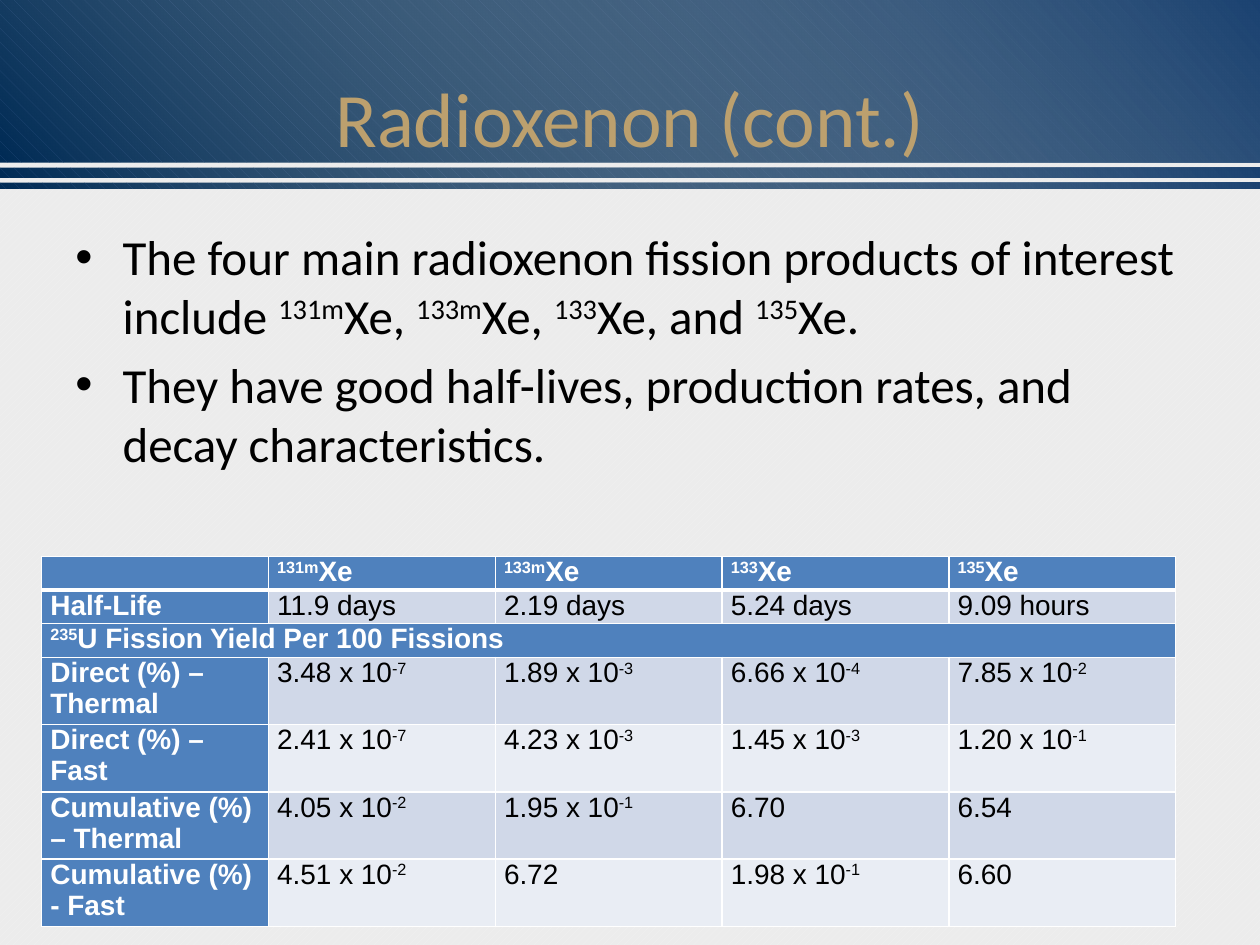
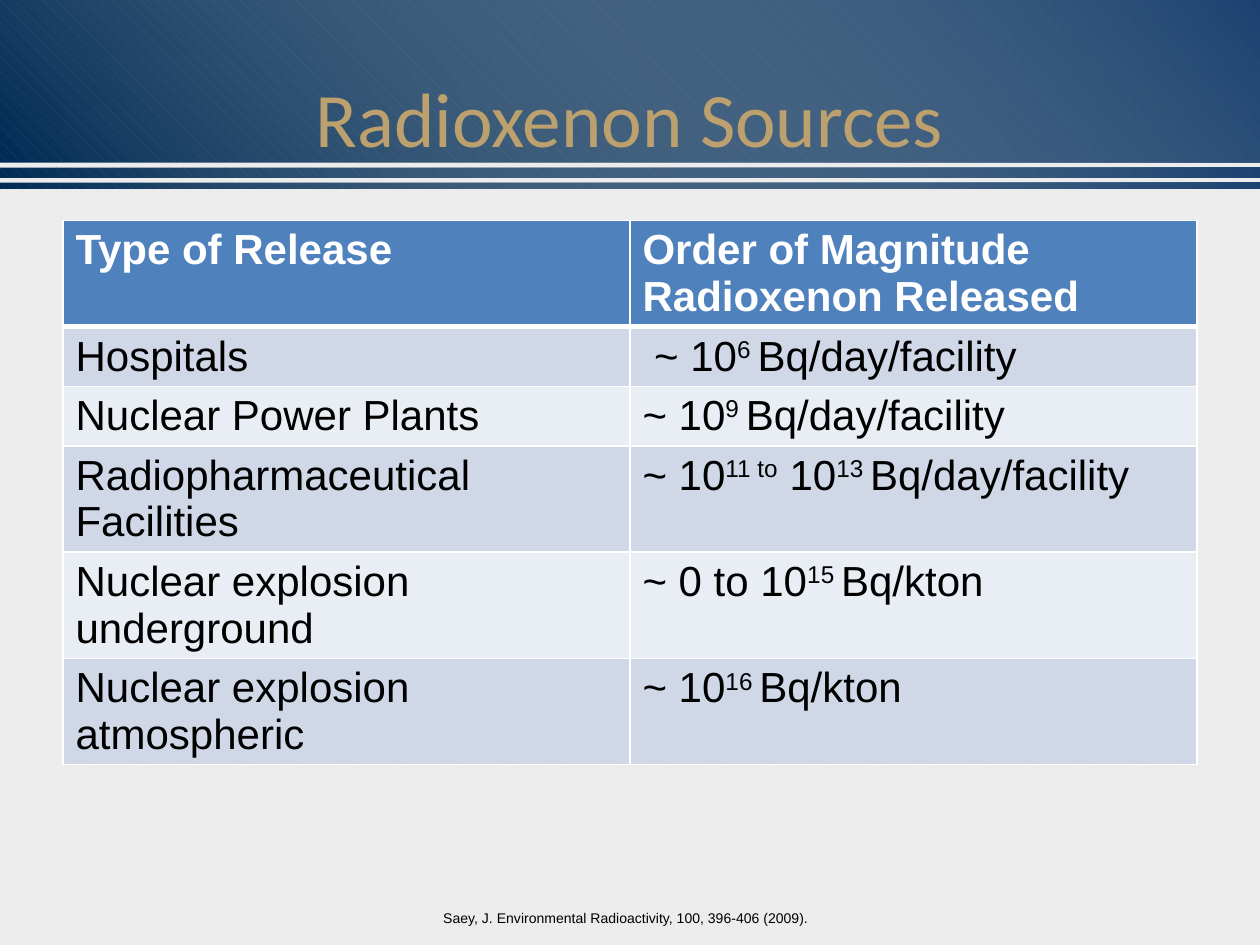
from lxml import etree
from pptx import Presentation
from pptx import util as u
from pptx.dml import color
from pptx.enum import dml, shapes, text
from pptx.oxml import ns

Pt = u.Pt
COLORS = {
    "navy": "002B55", "blue": "1C4372", "cream": "EEECE1", "gold": "BCA06E",
    "paper": "ECECEC", "hatch": "F2F2F2", "head": "4F81BD", "odd": "D0D8E8",
    "even": "E9EDF4", "white": "FFFFFF", "black": "000000",
}
BANDS = [(0, 92.9), (95.8, 5.8), (104.4, 3.6)]
WIDTH, HEIGHT = 720, 540

ISOTOPES = [
    ["", "^131m^Xe", "^133m^Xe", "^133^Xe", "^135^Xe"],
    ["Half-Life", "11.9 days", "2.19 days", "5.24 days", "9.09 hours"],
    ["^235^U Fission Yield Per 100 Fissions", "", "", "", ""],
    ["Direct (%) – Thermal", "3.48 x 10^-7", "1.89 x 10^-3", "6.66 x 10^-4", "7.85 x 10^-2"],
    ["Direct (%) – Fast", "2.41 x 10^-7", "4.23 x 10^-3", "1.45 x 10^-3", "1.20 x 10^-1"],
    ["Cumulative (%) – Thermal", "4.05 x 10^-2", "1.95 x 10^-1", "6.70", "6.54"],
    ["Cumulative (%) - Fast", "4.51 x 10^-2", "6.72", "1.98 x 10^-1", "6.60"],
]
RELEASES = [
    ["Type of Release", "Order of Magnitude Radioxenon Released"],
    ["Hospitals", " ~ 10^6 ^Bq/day/facility"],
    ["Nuclear Power Plants", "~ 10^9 ^Bq/day/facility"],
    ["Radiopharmaceutical Facilities", "~ 10^11 to^ 10^13 ^Bq/day/facility"],
    ["Nuclear explosion underground", "~ 0 to 10^15 ^Bq/kton"],
    ["Nuclear explosion atmospheric", "~ 10^16 ^Bq/kton"],
]


def rgb(name):
    return color.RGBColor.from_string(COLORS[name])


class Deck:
    def __init__(self):
        self.prs = Presentation()
        self.prs.slide_width, self.prs.slide_height = Pt(WIDTH), Pt(HEIGHT)
        self.layout = self.prs.slide_layouts.get_by_name("Title Only")
        self.pattern(self.layout.background.fill, dml.MSO_PATTERN.WIDE_UPWARD_DIAGONAL,
                     "hatch", "paper")
        self.s = None

    def pattern(self, fill, kind, fore, back):
        fill.patterned()
        fill.pattern = kind
        fill.fore_color.rgb, fill.back_color.rgb = rgb(fore), rgb(back)

    def slide(self, title):
        first = self.s is None
        self.s = self.prs.slides.add_slide(self.layout)
        if first:
            for top, height in BANDS:
                self.band(top, height)
        sp = self.s.shapes.title
        sp.left, sp.top, sp.width, sp.height = Pt(36), Pt(21.6), Pt(648), Pt(90)
        tf = sp.text_frame
        tf.vertical_anchor = text.MSO_ANCHOR.MIDDLE
        p = tf.paragraphs[0]
        p.alignment = text.PP_ALIGN.CENTER
        self.add_runs(p, title, size=44, name="Calibri", fill="gold")

    def band(self, top, height):
        base = self.rect(0, top, WIDTH, height)
        self.pattern(base.fill, dml.MSO_PATTERN.SHINGLE, "blue", "navy")
        glow = self.rect((WIDTH - height) / 2, top + (height - WIDTH) / 2, height, WIDTH)
        glow.rotation = 90
        glow.fill.gradient()
        glow.fill.gradient_angle = 130
        for stop, position, name in zip(glow.fill.gradient_stops, (0, 1), ("cream", "blue")):
            stop.position = position
            stop.color.rgb = rgb(name)
        clear = glow.element.find(".//" + ns.qn("a:gs")).find(ns.qn("a:srgbClr"))
        etree.SubElement(clear, ns.qn("a:alpha"), val="0")
        for sp in (base, glow):
            self.layout.placeholders[0].element.addprevious(sp.element)

    def rect(self, left, top, width, height):
        sp = self.s.shapes.add_shape(shapes.MSO_SHAPE.RECTANGLE,
                                     Pt(left), Pt(top), Pt(width), Pt(height))
        sp.shadow.inherit = False
        sp.line.fill.background()
        return sp

    def add_runs(self, p, content, size, name, fill, bold=False):
        style = {"size": Pt(size), "name": name, "bold": bold}
        for i, part in enumerate(content.split("^")):
            if not part:
                continue
            r = p.add_run()
            r.text = part
            for key, value in style.items():
                setattr(r.font, key, value)
            r.font.color.rgb = rgb(fill)
            if i % 2:
                r._r.get_or_add_rPr().set("baseline", "30000")
        if not content:
            etree.SubElement(p._p, ns.qn("a:endParaRPr"), sz=str(size * 100))

    def textbox(self, left, top, width, height, wrap=True):
        sp = self.s.shapes.add_textbox(Pt(left), Pt(top), Pt(width), Pt(height))
        sp.text_frame.word_wrap = wrap
        return sp.text_frame

    def bullets(self, items):
        tf = self.textbox(36, 126, 648, 356.4)
        for i, item in enumerate(items):
            p = tf.add_paragraph() if i else tf.paragraphs[0]
            pPr = p._p.get_or_add_pPr()
            pPr.set("marL", str(Pt(27)))
            pPr.set("indent", str(-Pt(27)))
            etree.SubElement(pPr, ns.qn("a:buFont"), typeface="Arial")
            etree.SubElement(pPr, ns.qn("a:buChar"), char="•")
            p.space_before = Pt(5.6 if i else 0)
            self.add_runs(p, item, size=28, name="Calibri", fill="black")

    def citation(self, content):
        tf = self.textbox(246.2, 516.2, 226.8, 17.3, wrap=False)
        tf.auto_size = text.MSO_AUTO_SIZE.SHAPE_TO_FIT_TEXT
        self.add_runs(tf.paragraphs[0], content, size=8, name="Arial", fill="black")

    def table(self, rows, left, top, heights, size, margins=None, label_column=False, spans=()):
        n = len(rows[0])
        frame = self.s.shapes.add_table(len(rows), n, Pt(left), Pt(top),
                                        Pt(648), Pt(sum(heights)))
        tbl = frame.table
        for col in tbl.columns:
            col.width = Pt(648 / n)
        for i, (row, height) in enumerate(zip(rows, heights)):
            tbl.rows[i].height = Pt(height)
            for j, content in enumerate(row):
                cell = tbl.cell(i, j)
                head = i == 0 or i in spans or (label_column and j == 0)
                cell.fill.solid()
                cell.fill.fore_color.rgb = rgb("head" if head else "odd" if i % 2 else "even")
                for key, value in (margins or {}).items():
                    setattr(cell, key, Pt(value))
                self.borders(cell, top=3 if i == 1 else 1, bottom=3 if i == 0 else 1)
                self.add_runs(cell.text_frame.paragraphs[0], content, size=size, name="Arial",
                              fill="white" if head else "black", bold=head)
            if i in spans:
                tbl.cell(i, 0).merge(tbl.cell(i, n - 1))

    def borders(self, cell, top, bottom):
        tcPr = cell._tc.get_or_add_tcPr()
        widths = {"lnL": 1, "lnR": 1, "lnT": top, "lnB": bottom}
        for i, (tag, width) in enumerate(widths.items()):
            ln = etree.Element(ns.qn("a:" + tag), w=str(Pt(width)))
            fill = etree.SubElement(ln, ns.qn("a:solidFill"))
            etree.SubElement(fill, ns.qn("a:srgbClr"), val=COLORS["white"])
            tcPr.insert(i, ln)


def main():
    deck = Deck()
    deck.slide("Radioxenon (cont.)")
    deck.bullets([
        "The four main radioxenon fission products of interest include "
        "^131m^Xe, ^133m^Xe, ^133^Xe, and ^135^Xe.",
        "They have good half-lives, production rates, and decay characteristics.",
    ])
    deck.table(ISOTOPES, 23.8, 318, [17.8] * 3 + [35.5] * 4, size=16,
               margins={"margin_left": 5, "margin_right": 5, "margin_top": 0, "margin_bottom": 0},
               label_column=True, spans=(2,))

    deck.slide("Radioxenon Sources")
    deck.table(RELEASES, 36, 126, [60.7, 34, 34] + [60.7] * 3, size=24)
    deck.citation("Saey, J. Environmental Radioactivity, 100, 396-406 (2009).")
    deck.prs.save("out.pptx")


if __name__ == "__main__":
    main()
